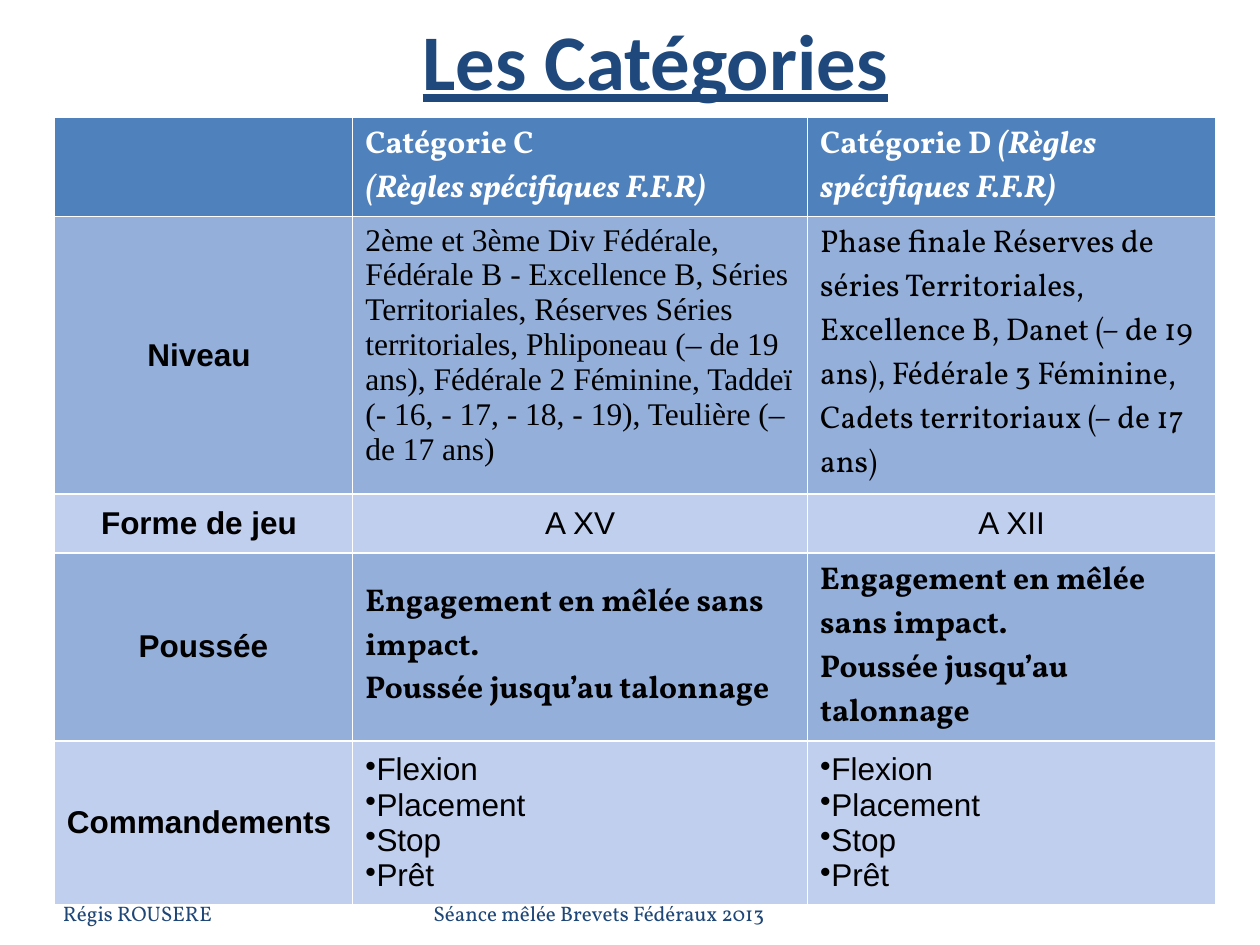
from dataclasses import dataclass

from lxml import etree
from pptx import Presentation
from pptx import util as u
from pptx.dml.color import RGBColor
from pptx.enum import text
from pptx.oxml.ns import qn


@dataclass(frozen=True)
class Theme:
    head: str = "4F81BD"
    dark: str = "93AFDA"
    light: str = "C1CFEE"
    white: str = "FFFFFF"
    black: str = "000000"
    title: str = "1F497D"
    footer: str = "1E4677"
    title_size: int = 45
    table_size: int = 18
    footer_size: int = 12
    sans: str = "Arial"
    serif: str = "Vollkorn"
    times: str = "Times New Roman"
    title_font: str = "Calibri"


theme = Theme()
LEFT, CENTER = text.PP_ALIGN.LEFT, text.PP_ALIGN.CENTER
TOP, MIDDLE, BOTTOM = (text.MSO_ANCHOR.TOP, text.MSO_ANCHOR.MIDDLE,
                       text.MSO_ANCHOR.BOTTOM)


def write(frame, lines, *, font, size, color, align=LEFT, bold=False,
          underline=None, bullet=None):
    """Each line is a string or a list of (words, italic) pairs."""
    frame.word_wrap = True
    for index, line in enumerate(lines):
        para = frame.paragraphs[0] if index == 0 else frame.add_paragraph()
        para.alignment = align
        if bullet:
            props = para._p.get_or_add_pPr()
            props.set("marL", "0")
            props.set("indent", "0")
            etree.SubElement(props, qn("a:buChar")).set("char", bullet)
        for words, italic in [(line, False)] if isinstance(line, str) else line:
            span = para.add_run()
            span.text = words
            span.font.name, span.font.size = font, u.Pt(size)
            span.font.bold, span.font.italic = bold, italic
            span.font.underline = underline
            span.font.color.rgb = RGBColor.from_string(color)


# Page on a grid of 10 columns by 7.5 rows
deck = Presentation()
deck.slide_width, deck.slide_height = u.Inches(10), u.Inches(7.5)
column, row = deck.slide_width / 10, deck.slide_height / 7.5
page = deck.slides.add_slide(deck.slide_layouts[6])

# Title and footers
title_format = dict(font=theme.title_font, size=theme.title_size,
                    color=theme.title, align=CENTER, bold=True, underline=True)
footer_format = dict(font=theme.serif, size=theme.footer_size, color=theme.footer)
for words, (left, top, width, height), anchor, inset, style in [
    ("Les Catégories", (0.7, 0, 9, 1.56), TOP, 0.09, title_format),
    ("Séance mêlée Brevets Fédéraux 2013", (2.92, 6.95, 3.67, 0.4), BOTTOM, 0,
     dict(footer_format, align=CENTER)),
    ("Régis ROUSERE", (0.5, 6.95, 2.33, 0.4), BOTTOM, 0, footer_format),
]:
    box = page.shapes.add_textbox(int(left * column), int(top * row),
                                  int(width * column), int(height * row))
    frame = box.text_frame
    frame.margin_left = frame.margin_right = frame.margin_bottom = 0
    frame.margin_top = int(inset * row)
    frame.vertical_anchor = anchor
    write(frame, [words], **style)

# Cell formats
heading = dict(font=theme.serif, color=theme.white, bold=True)
label = dict(font=theme.sans, align=CENTER, bold=True)
game = dict(font=theme.sans, align=CENTER)
push = dict(font=theme.serif, bold=True)
orders = dict(font=theme.sans, bullet="•")

push_lines = ["Engagement en mêlée sans impact.", "Poussée jusqu’au talonnage"]
order_lines = ["Flexion", "Placement", "Stop", "Prêt"]
rules = "(Règles spécifiques F.F.R)"

# Rows: height, fill, body anchor, cells of (lines, format)
table_rows = [
    (0.79, theme.head, TOP, [
        ([], heading),
        (["Catégorie C", [(rules, True)]], heading),
        ([[("Catégorie D ", False), (rules, True)]], heading)]),
    (2.19, theme.dark, TOP, [
        (["Niveau "], label),
        (["2ème et 3ème Div Fédérale, Fédérale B - Excellence B, Séries "
          "Territoriales, Réserves Séries territoriales, Phliponeau (– de 19 ans), "
          "Fédérale 2 Féminine, Taddeï (- 16, - 17, - 18, - 19), "
          "Teulière (– de 17 ans)"], dict(font=theme.times)),
        (["Phase finale Réserves de séries Territoriales, Excellence B, "
          "Danet (– de 19 ans), Fédérale 3 Féminine, "
          "Cadets territoriaux (– de 17 ans)"], dict(font=theme.serif))]),
    (0.47, theme.light, MIDDLE, [
        (["Forme de jeu "], label), (["A XV"], game), (["A XII"], game)]),
    (1.49, theme.dark, MIDDLE, [
        (["Poussée"], label), (push_lines, push), (push_lines, push)]),
    (1.21, theme.light, MIDDLE, [
        (["Commandements "], label), (order_lines, orders), (order_lines, orders)]),
]
widths = [2.37, 3.61, 3.24]

# Table
table = page.shapes.add_table(
    len(table_rows), len(widths), int(0.43 * column), int(0.93 * row),
    int(sum(widths) * column), int(sum(r[0] for r in table_rows) * row)).table
table.first_row = table.horz_banding = False
for index, width in enumerate(widths):
    table.columns[index].width = int(width * column)

for y, (height, fill, anchor, cells) in enumerate(table_rows):
    table.rows[y].height = int(height * row)
    for x, (lines, style) in enumerate(cells):
        cell = table.cell(y, x)
        cell.fill.solid()
        cell.fill.fore_color.rgb = RGBColor.from_string(fill)
        cell.vertical_anchor = MIDDLE if x == 0 else anchor
        if style is game or lines == ["Forme de jeu "]:
            cell.margin_left = cell.margin_right = 0
            cell.margin_top = cell.margin_bottom = 0
        write(cell.text_frame, lines,
              **{"size": theme.table_size, "color": theme.black, **style})
        # White borders, placed ahead of the fill
        props = cell._tc.get_or_add_tcPr()
        for place, side in enumerate(("lnL", "lnR", "lnT", "lnB")):
            line = etree.Element(qn(f"a:{side}"), w=str(u.Pt(1)))
            paint = etree.SubElement(line, qn("a:solidFill"))
            etree.SubElement(paint, qn("a:srgbClr")).set("val", theme.white)
            props.insert(place, line)

deck.save("out.pptx")
